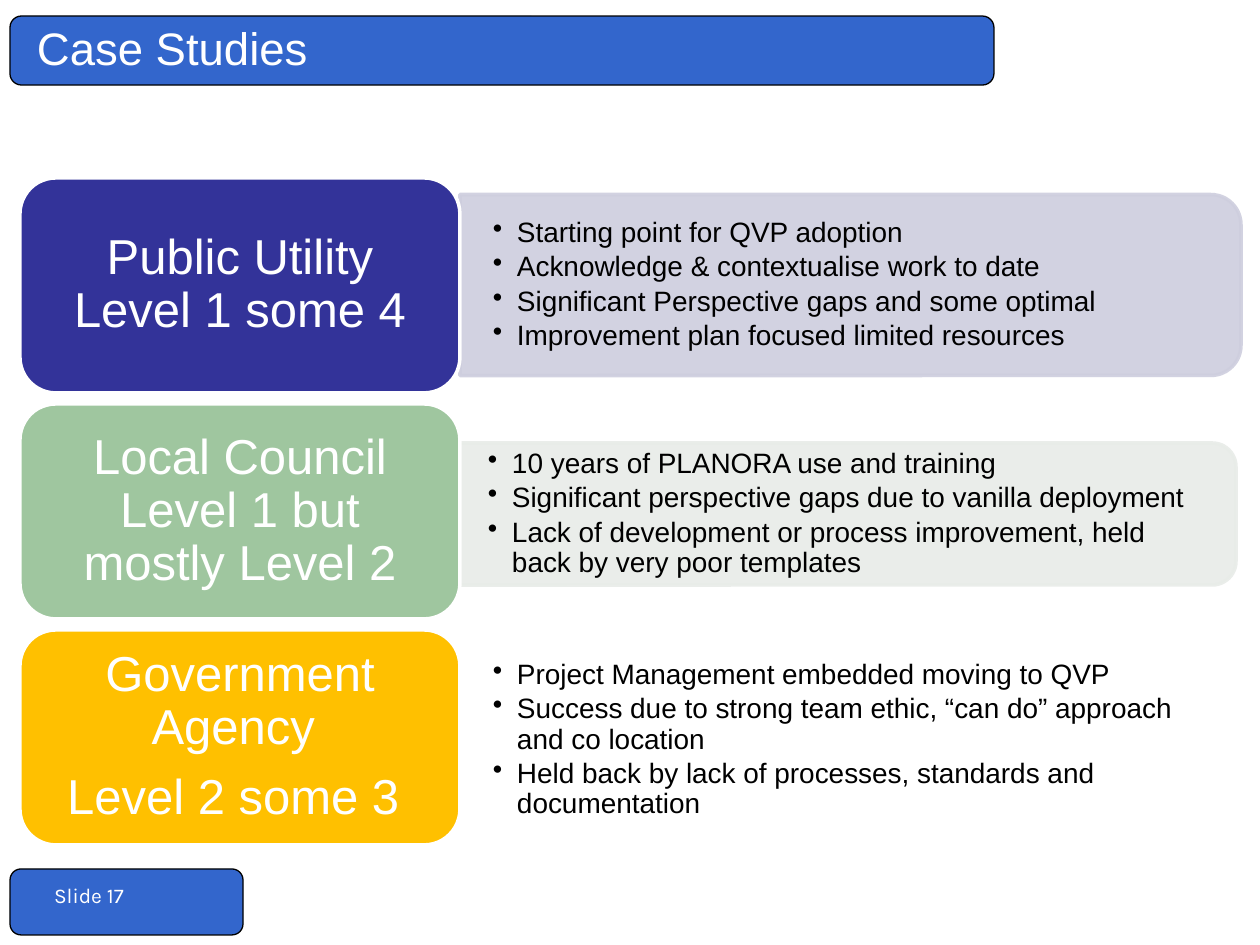
import dataclasses
import pptx
import pptx.util
import pptx.dml.color
import pptx.enum.shapes
import pptx.enum.text
import pptx.oxml.ns
import lxml.etree

SCALE = 914400 / 126
SHAPE = pptx.enum.shapes.MSO_SHAPE
ALIGN = pptx.enum.text.PP_ALIGN
MIDDLE = pptx.enum.text.MSO_ANCHOR.MIDDLE


@dataclasses.dataclass(frozen=True)
class Theme:
    bar: str = "3366CC"
    edge: str = "000000"
    dark: str = "000000"
    light: str = "FFFFFF"
    font: str = "Arial"
    foot: str = "Karla"
    title: int = 26
    head: int = 28
    body: int = 16
    small: int = 12


THEME = Theme()

# Card colour, panel colour, panel left, panel middle, panel height, heads, points
CASES = [
    ("333399", "CECEDE", 460, 285, 181,
     ["Public Utility Level 1 some 4"],
     ["Starting point for QVP adoption",
      "Acknowledge & contextualise work to date",
      "Significant Perspective gaps and some optimal",
      "Improvement plan focused limited resources"]),
    ("9FC69F", "E8ECE8", 455, 514, 142,
     ["Local Council Level 1 but mostly Level 2"],
     ["10 years of PLANORA use and training",
      "Significant perspective gaps due to vanilla deployment",
      "Lack of development or process improvement, held back by very poor "
      "templates"]),
    ("FFC000", "FFFFFF", 460, 740, 213,
     ["Government Agency ", "Level 2 some 3 "],
     ["Project Management embedded moving to QVP",
      "Success due to strong team ethic, “can do” approach and co location",
      "Held back by lack of processes, standards and documentation"]),
]
CARD_LEFT, CARD_TOP, CARD_WIDE, CARD_HIGH, CARD_STEP = 20, 178, 440, 215, 226
PANEL_WIDE, TEXT_WIDE = 781, 772


def px(num):
    return pptx.util.Emu(round(num * SCALE))


def paint(color, code):
    color.rgb = pptx.dml.color.RGBColor.from_string(code)


def add_shape(slide, kind, box, fill, line, width):
    shape = slide.shapes.add_shape(kind, *map(px, box))
    shape.shadow.inherit = False
    shape.fill.solid()
    paint(shape.fill.fore_color, fill)
    paint(shape.line.color, line)
    shape.line.width = pptx.util.Pt(width)
    return shape


def add_bar(slide, box):
    add_shape(slide, SHAPE.ROUNDED_RECTANGLE, box, THEME.bar, THEME.edge, 0.75)


def set_frame(shape, side, edge):
    frame = shape.text_frame
    frame.word_wrap = True
    frame.vertical_anchor = MIDDLE
    frame.margin_left = frame.margin_right = px(side)
    frame.margin_top = frame.margin_bottom = px(edge)
    return frame


def add_run(para, text, size, code, font=THEME.font):
    run = para.add_run()
    run.text = text
    run.font.size = pptx.util.Pt(size)
    run.font.name = font
    paint(run.font.color, code)


def add_label(slide, box, text, size, font=THEME.font):
    frame = set_frame(slide.shapes.add_textbox(*map(px, box)), 0, 0)
    add_run(frame.paragraphs[0], text, size, THEME.light, font)


def add_lines(frame, lines, size, code, after, align, bullet=False):
    for index, text in enumerate(lines):
        para = frame.add_paragraph() if index else frame.paragraphs[0]
        para.alignment = align
        para.line_spacing = 0.9
        para.space_after = pptx.util.Pt(after)
        if bullet:
            set_bullet(para)
        add_run(para, text, size, code)


def set_bullet(para):
    props = para._p.get_or_add_pPr()
    props.set("marL", str(px(24)))
    props.set("indent", str(-px(24)))
    mark = lxml.etree.SubElement(props, pptx.oxml.ns.qn("a:buChar"))
    mark.set("char", "•")


def add_panel(slide, left, mid, high, code):
    """Draw a panel rounded on its right side: a round-top box turned by 90°."""
    box = (left + (PANEL_WIDE - high) / 2, mid - PANEL_WIDE / 2,
           high, PANEL_WIDE)
    shape = add_shape(slide, SHAPE.ROUND_2_SAME_RECTANGLE, box, code, code, 2)
    shape.rotation = 90
    tag = pptx.oxml.ns.qn
    for color in shape._element.spPr.iter(tag("a:srgbClr")):
        lxml.etree.SubElement(color, tag("a:alpha")).set("val", "90000")


def add_points(slide, left, mid, high, points):
    box = (left - 1, mid - high / 2, TEXT_WIDE, high)
    frame = set_frame(slide.shapes.add_textbox(*map(px, box)), 34, 17)
    add_lines(frame, points, THEME.body, THEME.dark, 2.4, ALIGN.LEFT, True)


def add_card(slide, top, code, heads):
    box = (CARD_LEFT, top, CARD_WIDE, CARD_HIGH)
    card = add_shape(slide, SHAPE.ROUNDED_RECTANGLE, box, code, THEME.light, 2)
    frame = set_frame(card, 15, 8)
    add_lines(frame, heads, THEME.head, THEME.light, 9.8, ALIGN.CENTER)


def main():
    deck = pptx.Presentation()
    deck.slide_width, deck.slide_height = px(1260), px(945)
    slide = deck.slides.add_slide(deck.slide_layouts[6])
    add_bar(slide, (10, 16, 984, 69))
    add_bar(slide, (10, 869, 233, 66))
    add_label(slide, (54, 881, 119, 28), "Slide 17", THEME.small, THEME.foot)
    add_label(slide, (37, 0, 935, 95), "Case Studies", THEME.title)
    for row, (fill, tint, left, mid, high, heads, points) in enumerate(CASES):
        add_panel(slide, left, mid, high, tint)
        add_points(slide, left, mid, high, points)
        add_card(slide, CARD_TOP + row * CARD_STEP, fill, heads)
    deck.save("out.pptx")


if __name__ == "__main__":
    main()
